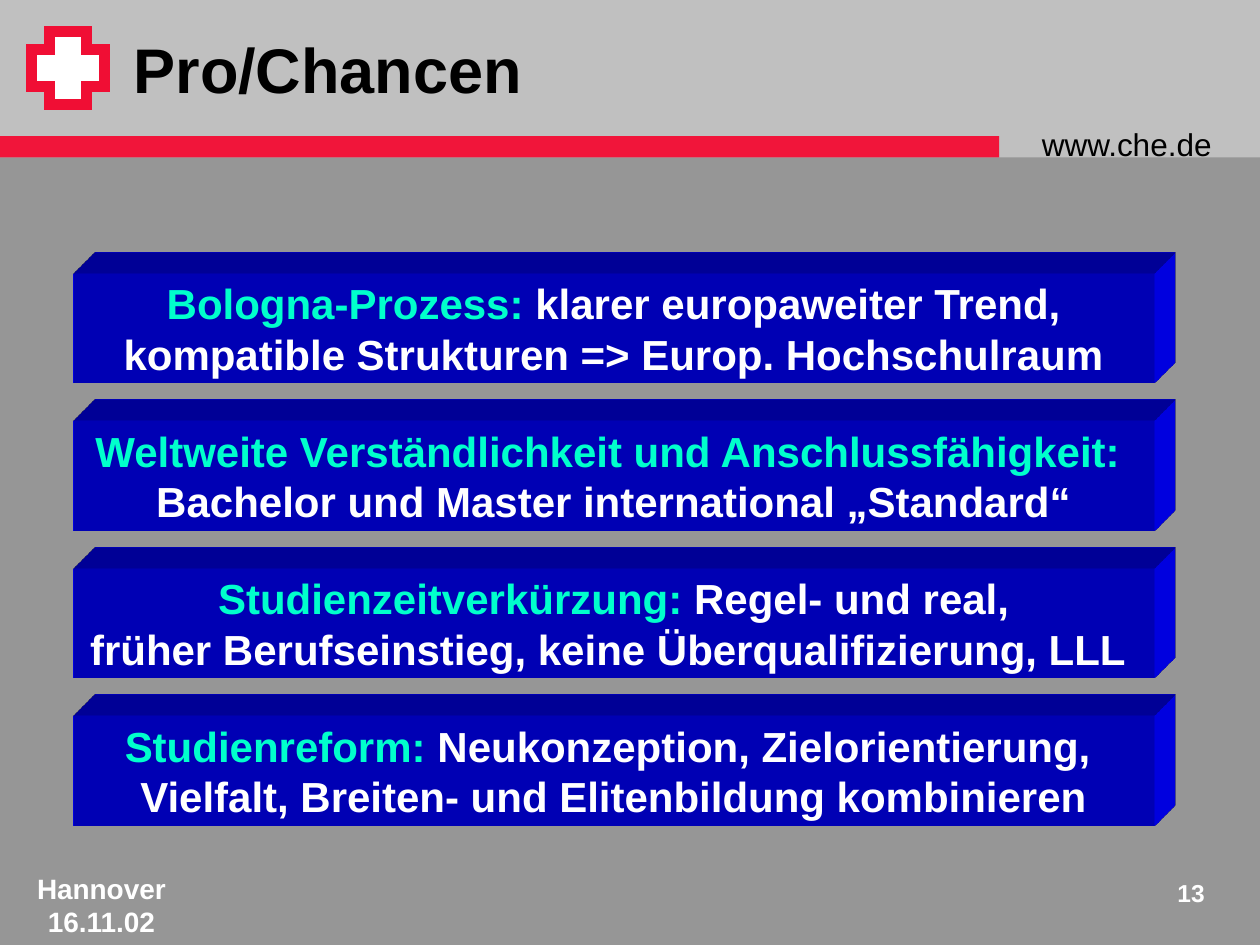
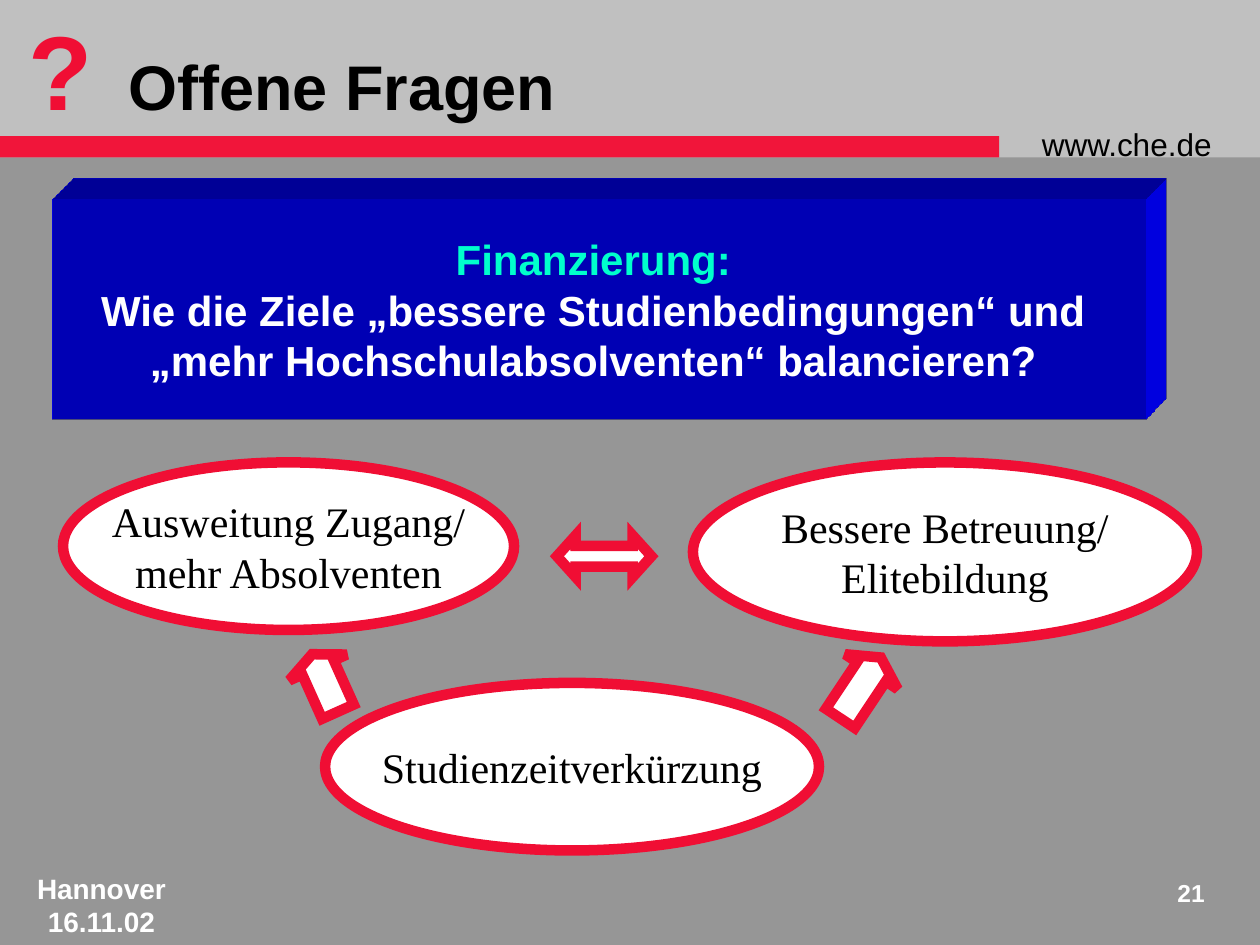
from lxml import etree
from pptx import Presentation
from pptx.dml.color import RGBColor
from pptx.enum.shapes import MSO_SHAPE
from pptx.enum.text import MSO_ANCHOR, MSO_AUTO_SIZE, PP_ALIGN
from pptx.oxml import parse_xml
from pptx.oxml.ns import qn
from pptx.util import Inches, Pt

RECTANGLE, ELLIPSE, CROSS = MSO_SHAPE.RECTANGLE, MSO_SHAPE.OVAL, MSO_SHAPE.CROSS
RIGHT_ARROW, DOUBLE_ARROW = MSO_SHAPE.RIGHT_ARROW, MSO_SHAPE.LEFT_RIGHT_ARROW
LEFT, CENTER, RIGHT = PP_ALIGN.LEFT, PP_ALIGN.CENTER, PP_ALIGN.RIGHT
TOP, MIDDLE = MSO_ANCHOR.TOP, MSO_ANCHOR.MIDDLE

COLORS = {
    "background": "969696", "header": "C0C0C0", "band": "F1153A",
    "accent": "F00E34", "block": "0000FF", "keyword": "00FFCC",
    "white": "FFFFFF", "black": "000000",
}
SANS, SERIF = "Arial", "Times New Roman"

# Content: each line is a list of (text, colour) runs
CHANCES = [
    [[("Bologna-Prozess: ", "keyword"), ("klarer europaweiter Trend,", "white")],
     [("kompatible Strukturen => Europ. Hochschulraum", "white")]],
    [[("Weltweite Verständlichkeit und Anschlussfähigkeit: ", "keyword")],
     [("Bachelor und Master international „Standard“", "white")]],
    [[("Studienzeitverkürzung: ", "keyword"), ("Regel- und real,", "white")],
     [("früher Berufseinstieg, keine Überqualifizierung, LLL ", "white")]],
    [[("Studienreform: ", "keyword"),
      ("Neukonzeption, Zielorientierung, ", "white")],
     [("Vielfalt, Breiten- und Elitenbildung kombinieren", "white")]],
]
FUNDING = [
    [("Finanzierung: ", "keyword")],
    [("Wie die Ziele „bessere Studienbedingungen“ und ", "white")],
    [("„mehr Hochschulabsolventen“ balancieren? ", "white")],
]
GOALS = [  # box, lines
    ((0.5, 3.67, 3.58, 1.33), ["Ausweitung Zugang/", "mehr Absolventen"]),
    ((5.5, 3.67, 4, 1.42), ["Bessere Betreuung/", "Elitebildung"]),
    ((2.58, 5.42, 3.92, 1.33), ["Studienzeitverkürzung"]),
]
ARROWS = [  # preset, box, rotation, adjustments
    (DOUBLE_ARROW, (4.42, 4.25, 0.75, 0.33), 0, (0.5, 0.45)),
    (RIGHT_ARROW, (6.54, 5.21, 0.58, 0.5), 303.6, (0.55, 0.27)),
    (RIGHT_ARROW, (2.33, 5.17, 0.5, 0.5), 245.8, (0.55, 0.23)),
]
PLACE_AND_DATE = [[("Hannover", "white")], [("16.11.02", "white")]]

# Oblique depth of the blue blocks
NAMESPACE = 'xmlns:a="http://schemas.openxmlformats.org/drawingml/2006/main"'
SCENE = (f'<a:scene3d {NAMESPACE}><a:camera prst="legacyObliqueTopRight"/>'
         '<a:lightRig rig="legacyFlat3" dir="b"/></a:scene3d>')
DEPTH = (f'<a:sp3d {NAMESPACE} extrusionH="430200" prstMaterial="legacyMatte">'
         '<a:bevelT w="13500" h="13500" prst="angle"/>'
         '<a:bevelB w="13500" h="13500" prst="angle"/>'
         f'<a:extrusionClr><a:srgbClr val="{COLORS["block"]}"/></a:extrusionClr>'
         '</a:sp3d>')


def rgb(name):
    return RGBColor.from_string(COLORS[name])


def inches(box):
    return [Inches(length) for length in box]


def add_runs(paragraph, runs, size, font=SANS, bold=True):
    for text, color in runs:
        run = paragraph.add_run()
        run.text = text
        run.font.name, run.font.size, run.font.bold = font, Pt(size), bold
        run.font.color.rgb = rgb(color)


def write(shape, lines, size, align=CENTER, anchor=MIDDLE, wrap=False,
          font=SANS, bold=True):
    frame = shape.text_frame
    frame.word_wrap, frame.vertical_anchor = wrap, anchor
    for index, runs in enumerate(lines):
        paragraph = frame.add_paragraph() if index else frame.paragraphs[0]
        paragraph.alignment = align
        add_runs(paragraph, runs, size, font, bold)


def add_figure(slide, preset, box, fill, outlined=False, adjustments=()):
    shape = slide.shapes.add_shape(preset, *inches(box))
    shape.shadow.inherit = False
    shape.fill.solid()
    shape.fill.fore_color.rgb = rgb(fill)
    for index, value in enumerate(adjustments):
        shape.adjustments[index] = value
    if outlined:
        shape.line.color.rgb = rgb("accent")
        shape.line.width = Pt(6)
        miter = etree.SubElement(shape.line._get_or_add_ln(), qn("a:miter"))
        miter.set("lim", "800000")
    else:
        shape.line.fill.background()
    return shape


def add_text(slide, box, lines, size, **style):
    text_box = slide.shapes.add_textbox(*inches(box))
    write(text_box, lines, size, wrap=True, **style)
    return text_box


def add_block(slide, box, lines):
    block = add_figure(slide, RECTANGLE, box, "block")
    properties = block.element.spPr
    properties.append(parse_xml(SCENE))
    properties.append(parse_xml(DEPTH))
    write(block, lines, 24)


def move_frame_to_layout(slide, layout):
    """Build header, band, address and footer once, on the layout."""
    frame = [
        add_figure(slide, RECTANGLE, (0, 0, 10, 1.25), "header"),
        add_figure(slide, RECTANGLE, (0, 1.08, 7.93, 0.17), "band"),
        add_text(slide, (8.17, 0.94, 1.75, 0.4), [[("www.che.de", "black")]],
                 18, align=LEFT, anchor=TOP, bold=False),
        add_text(slide, (0.17, 6.86, 1.27, 0.64), PLACE_AND_DATE, 16),
    ]
    for number, shape in enumerate(frame, start=101):
        shape.element.nvSpPr.cNvPr.set("id", str(number))
        layout.shapes.element.append(shape.element)


def add_slide(presentation, layout, title_runs, title_indent, number):
    slide = presentation.slides.add_slide(layout)
    title = slide.shapes.title
    title.left, title.top, title.width, title.height = inches((0.17, 0, 8.08, 1.08))
    title.text_frame.margin_left = Inches(0.06)
    title.text_frame.auto_size = MSO_AUTO_SIZE.NONE
    # The indent is a left margin; a leading symbol hangs in front of it
    properties = title.text_frame.paragraphs[0]._p.get_or_add_pPr()
    hanging = len(title_runs) > 1
    properties.set("marL", str(Inches(title_indent)))
    properties.set("indent", str(-Inches(title_indent) if hanging else 0))
    if hanging:
        tabs = etree.SubElement(properties, qn("a:tabLst"))
        etree.SubElement(tabs, qn("a:tab"), pos=str(Inches(title_indent)), algn="l")
    write(title, [title_runs[-1:]] if not hanging else [[]], 36, align=LEFT, wrap=True)
    if hanging:
        paragraph = title.text_frame.paragraphs[0]
        add_runs(paragraph, title_runs[:1], 60)
        add_runs(paragraph, title_runs[1:], 36)
    add_text(slide, (9.08, 6.92, 0.58, 0.42), [[(number, "white")]], 14,
             align=RIGHT, anchor=TOP)
    return slide


def main():
    presentation = Presentation()
    presentation.slide_width, presentation.slide_height = Inches(10), Inches(7.5)
    background = presentation.slide_master.background.fill
    background.solid()
    background.fore_color.rgb = rgb("background")
    layout = presentation.slide_layouts[5]

    # Chances: four blocks at equal steps
    chances = add_slide(presentation, layout, [("Pro/Chancen", "black")], 0.83, "13")
    move_frame_to_layout(chances, layout)
    for row, lines in enumerate(CHANCES):
        add_block(chances, (0.58, 2.17 + row * 1.17, 8.58, 0.87), lines)
    add_figure(chances, CROSS, (0.25, 0.25, 0.58, 0.58), "white", True, (0.25,))

    # Open questions: goals pulling against each other
    title = [("?", "accent"), ("\tOffene Fragen", "black")]
    questions = add_slide(presentation, layout, title, 0.79, "21")
    for box, lines in GOALS:
        goal = add_figure(questions, ELLIPSE, box, "white", True)
        write(goal, [[(line, "black")] for line in lines], 24, font=SERIF, bold=False)
    for preset, box, rotation, adjustments in ARROWS:
        arrow = add_figure(questions, preset, box, "white", True, adjustments)
        arrow.rotation = rotation
    add_block(questions, (0.42, 1.58, 8.67, 1.75), FUNDING)

    presentation.save("out.pptx")


if __name__ == "__main__":
    main()
